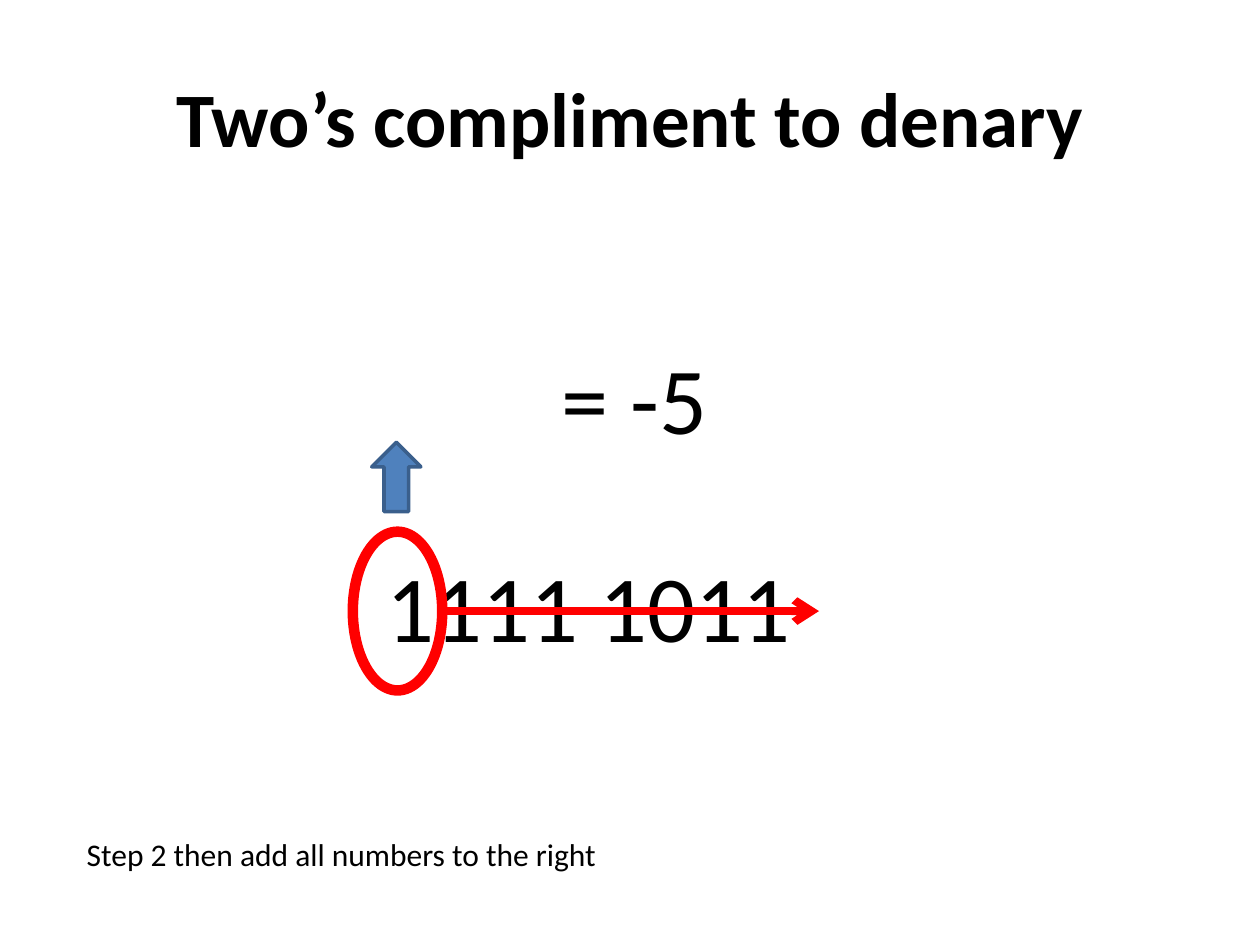
from lxml import etree
from pptx import Presentation
from pptx.dml.color import RGBColor
from pptx.enum import shapes, text
from pptx.oxml import ns
from pptx.util import Inches, Pt

BLACK, RED = "000000", "FF0000"
BLUE, DARK_BLUE = "4F81BD", "3A5F8C"


def color(value):
    return RGBColor.from_string(value)


def place(*lengths):
    return [Inches(length) for length in lengths]


def add_text(page, words, at, size, bold=False, wrap=True,
             align=text.PP_ALIGN.CENTER, anchor=text.MSO_ANCHOR.TOP):
    frame = page.shapes.add_textbox(*place(*at)).text_frame
    frame.word_wrap = wrap
    frame.vertical_anchor = anchor
    frame.text = words
    para = frame.paragraphs[0]
    para.alignment = align
    font = para.runs[0].font
    font.name, font.size, font.bold = "Calibri", Pt(size), bold
    font.color.rgb = color(BLACK)


def set_line(line, value, width):
    line.color.rgb = color(value)
    line.width = Pt(width)


def add_outlined(page, kind, at, line_color, width, fill=None):
    shape = page.shapes.add_shape(kind, *place(*at))
    shape.shadow.inherit = False
    if fill:
        shape.fill.solid()
        shape.fill.fore_color.rgb = color(fill)
    else:
        shape.fill.background()
    set_line(shape.line, line_color, width)
    return shape


def add_arrow(page, start, end, line_color, width):
    arrow = page.shapes.add_connector(
        shapes.MSO_CONNECTOR.STRAIGHT, *place(*start, *end))
    set_line(arrow.line, line_color, width)
    line = arrow.line._get_or_add_ln()
    etree.SubElement(line, ns.qn("a:tailEnd"), type="arrow")
    etree.SubElement(arrow._element.spPr, ns.qn("a:effectLst"))


def main():
    deck = Presentation()
    deck.slide_width, deck.slide_height = place(10, 7.5)
    page = deck.slides.add_slide(deck.slide_layouts[6])

    # Title and step
    add_text(page, "Two’s compliment to denary", (0.5, 0.3, 9, 1.25), 44,
             bold=True, anchor=text.MSO_ANCHOR.MIDDLE)
    add_text(page, "Step 2 then add all numbers to the right",
             (0.59, 6.58, 8.9, 0.4), 18, align=text.PP_ALIGN.LEFT)

    # Binary number with its sign bit circled
    add_text(page, "1111 1011", (2.95, 4.3, 3.45, 1.01), 54, wrap=False)
    add_outlined(page, shapes.MSO_SHAPE.OVAL, (2.8, 4.22, 0.71, 1.26), RED, 6)

    # Sign bit points up to the denary result
    pointer = add_outlined(page, shapes.MSO_SHAPE.DOWN_ARROW,
                           (2.95, 3.51, 0.39, 0.55), DARK_BLUE, 2, BLUE)
    pointer.rotation = 180
    add_text(page, "= -5", (4.35, 2.65, 1.37, 1.01), 54, wrap=False)

    # Reading direction across the remaining bits
    add_arrow(page, (3.5, 4.85), (6.5, 4.85), RED, 4.5)

    deck.save("out.pptx")


if __name__ == "__main__":
    main()
